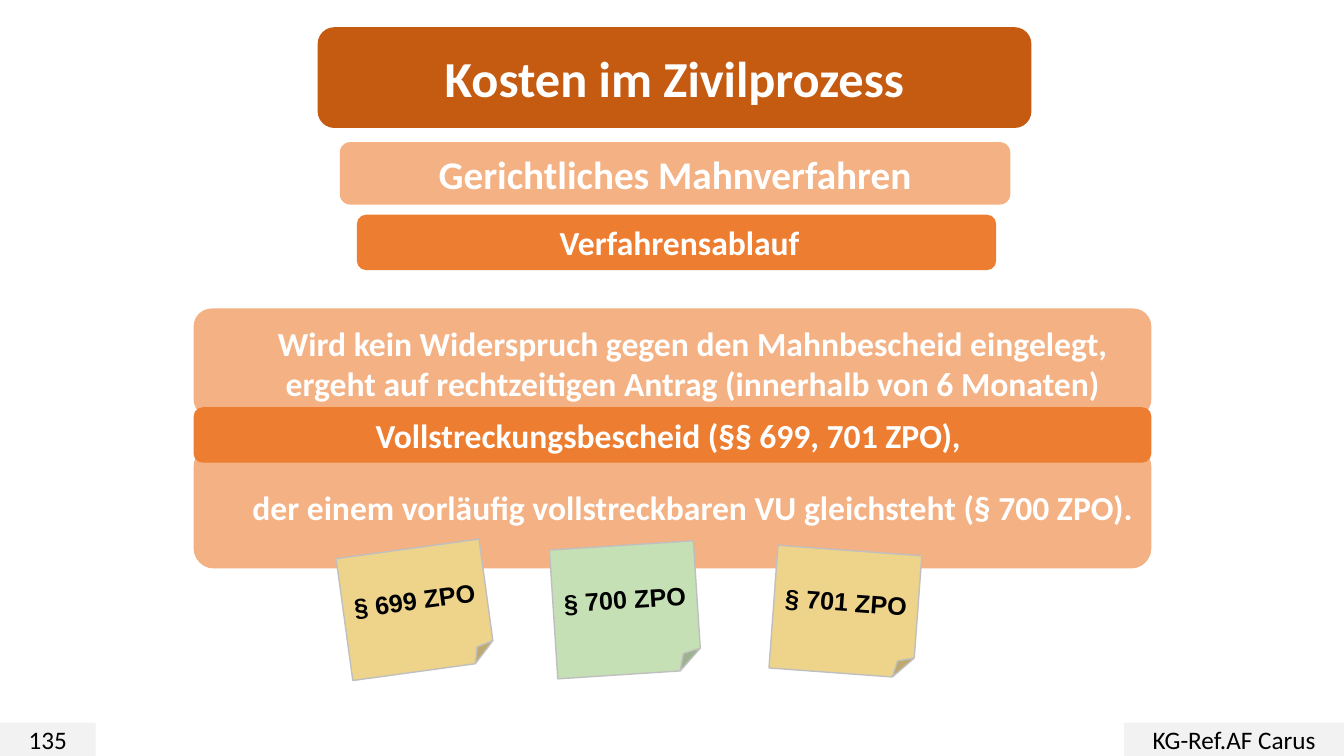
from pptx import Presentation
from pptx.dml.color import RGBColor
from pptx.enum.shapes import MSO_SHAPE
from pptx.enum.text import MSO_ANCHOR, MSO_AUTO_SIZE, PP_ALIGN
from pptx.util import Pt

EMU_PER_PX = 9144  # 100 px to the inch

WHITE = RGBColor(0xFF, 0xFF, 0xFF)
BLACK = RGBColor(0x00, 0x00, 0x00)
RUST = RGBColor(0xC5, 0x5A, 0x11)
ORANGE = RGBColor(0xED, 0x7D, 0x31)
PEACH = RGBColor(0xF4, 0xB1, 0x83)
PALE_GREY = RGBColor(0xF2, 0xF2, 0xF2)
EDGE_GREY = RGBColor(0xBF, 0xBF, 0xBF)
SAND = RGBColor(0xEE, 0xD4, 0x8A)
MINT = RGBColor(0xC5, 0xE0, 0xB4)


def px(length):
    return length * EMU_PER_PX


class SlideBuilder:
    font = "Calibri"
    note_font = "Arial"

    def __init__(self, page):
        self.page = page

    def shape(self, kind, place, fill):
        shape = self.page.shapes.add_shape(kind, *map(px, place))
        shape.shadow.inherit = False
        shape.fill.solid()
        shape.fill.fore_color.rgb = fill
        shape.line.fill.background()
        return shape

    def set_text(self, shape, text, size, color=WHITE, bold=True, font=font,
                 left=10, right=10):
        frame = shape.text_frame
        frame.word_wrap = True
        frame.auto_size = MSO_AUTO_SIZE.NONE
        frame.vertical_anchor = MSO_ANCHOR.MIDDLE
        frame.margin_left, frame.margin_right = px(left), px(right)
        frame.margin_top = frame.margin_bottom = px(5)
        frame.text = text
        para = frame.paragraphs[0]
        para.alignment = PP_ALIGN.CENTER
        para.line_spacing = 1.0
        para.space_before = Pt(0)
        para.font.name = font
        para.font.size = Pt(size)
        para.font.bold = bold
        para.font.color.rgb = color

    def title(self, text, place, fill, size):
        """Set the title placeholder on top of a rounded plate."""
        title = self.page.shapes.title
        plate = self.shape(MSO_SHAPE.ROUNDED_RECTANGLE, place, fill)
        title.element.addprevious(plate.element)
        title.left, title.top, title.width, title.height = map(px, place)
        self.set_text(title, text, size)

    def banner(self, text, place, fill, size=24, left=10, right=10):
        box = self.shape(MSO_SHAPE.ROUNDED_RECTANGLE, place, fill)
        self.set_text(box, text, size, left=left, right=right)

    def footer(self, text, left, width):
        box = self.shape(MSO_SHAPE.RECTANGLE, (left, 717, width, 33), PALE_GREY)
        self.set_text(box, text, 18, BLACK, bold=False)

    def sticky_note(self, text, place, fill, rotation):
        note = self.shape(MSO_SHAPE.FOLDED_CORNER, place, fill)
        note.line.color.rgb = EDGE_GREY
        note.line.width = Pt(1)
        note.rotation = rotation
        self.set_text(note, text, 18, BLACK, font=self.note_font, left=5, right=5)


def main():
    deck = Presentation()
    deck.slide_width, deck.slide_height = px(1333), px(750)
    slide = SlideBuilder(deck.slides.add_slide(deck.slide_layouts[5]))

    slide.title("Kosten im Zivilprozess", (315, 27, 708, 100), RUST, 36)
    slide.banner("Gerichtliches Mahnverfahren", (337, 141, 665, 62), PEACH, 28)
    slide.banner("Verfahrensablauf", (354, 213, 634, 55), ORANGE, left=16)

    slide.banner("Wird kein Widerspruch gegen den Mahnbescheid eingelegt, "
                 "ergeht auf rechtzeitigen Antrag (innerhalb von 6 Monaten)",
                 (192, 306, 950, 108), PEACH, left=50)
    slide.banner("der einem vorläufig vollstreckbaren VU gleichsteht (§ 700 ZPO).",
                 (192, 443, 950, 121), PEACH, left=50)
    slide.banner("Vollstreckungsbescheid (§§ 699, 701 ZPO),",
                 (192, 404, 950, 55), ORANGE, right=18)

    slide.sticky_note("§ 699 ZPO", (341, 544, 143, 122), SAND, 352.2)
    slide.sticky_note("§ 700 ZPO", (549, 541, 143, 128), MINT, 356.3)
    slide.sticky_note("§ 701 ZPO", (767, 546, 143, 122), SAND, 4.2)

    slide.footer("135", 0, 95)
    slide.footer("KG-Ref.AF Carus", 1115, 218)

    deck.save("out.pptx")


if __name__ == "__main__":
    main()
